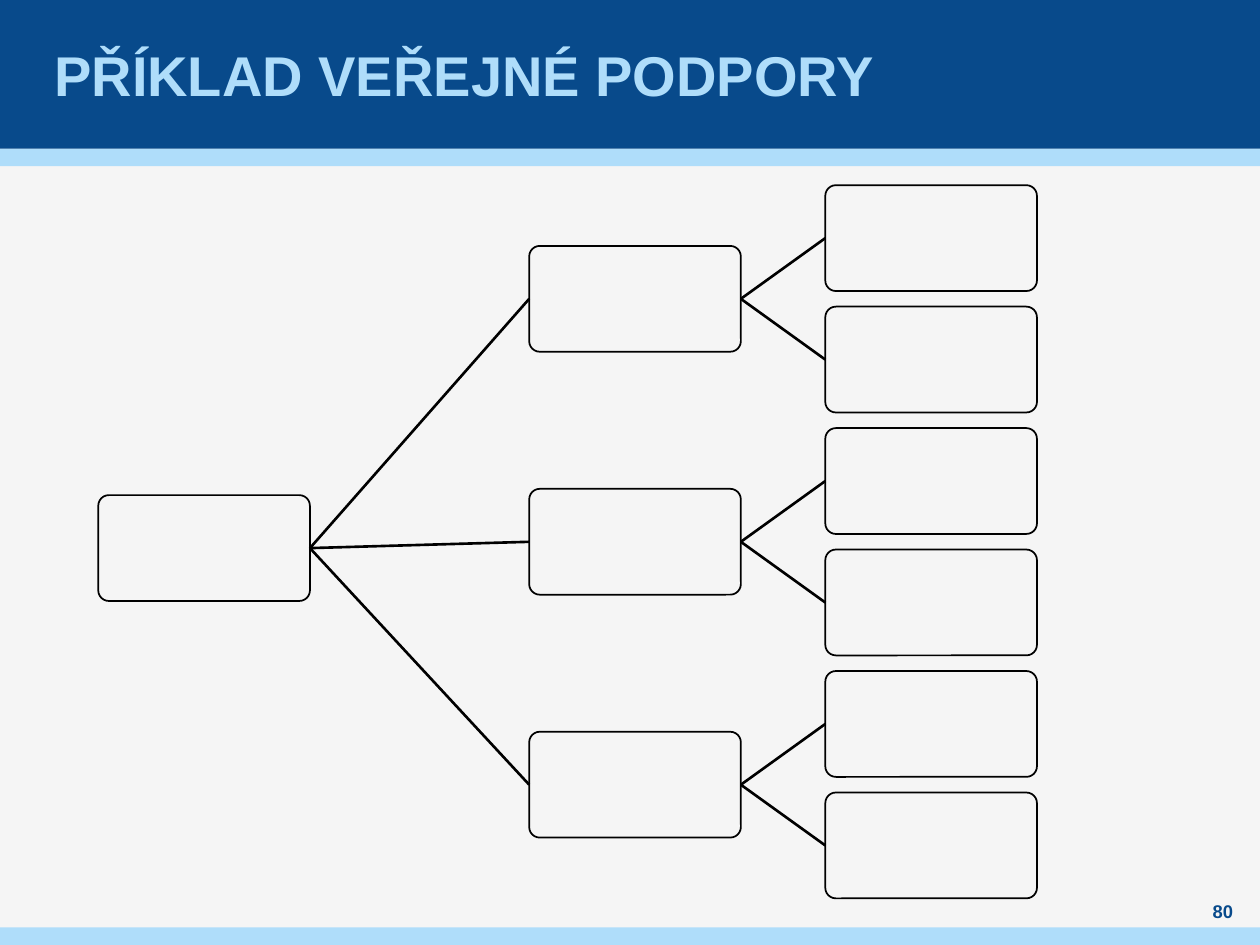
from pptx import Presentation
from pptx.enum.shapes import MSO_CONNECTOR as CONN, MSO_SHAPE as SHAPE
from pptx.enum.text import MSO_ANCHOR as ANCHOR, PP_ALIGN as ALIGN
from pptx.dml.color import RGBColor as RGB
from pptx.oxml.ns import qn
from pptx.util import Inches, Pt
from lxml import etree

COLORS = {"paper": "F5F5F5", "navy": "084A8B", "sky": "AFDDFA", "ink": "000000"}
FONT = "Arial"
BOX_W, BOX_H = 1.68, 0.84
ROOT_X, BRANCH_X, LEAF_X = 0.78, 4.2, 6.55
ROOT_Y = 3.93
FIRST_LEAF, LAST_LEAF = 1.47, 6.29
BRANCHES, LEAVES_EACH = 3, 2
LEFT_SITE, RIGHT_SITE = 1, 3


def color(name):
    return RGB.from_string(COLORS[name])


def write(tf, text, size=12, fill="ink", bold=False, align=ALIGN.LEFT):
    p = tf.paragraphs[0]
    p.alignment = align
    r = p.add_run()
    r.text = text
    r.font.name = FONT
    r.font.size = Pt(size)
    r.font.bold = bold
    r.font.color.rgb = color(fill)


class Deck:
    def __init__(self, prs):
        self.s = prs.slides.add_slide(prs.slide_layouts[6])
        bg = self.s.background.fill
        bg.solid()
        bg.fore_color.rgb = color("paper")

    def shape(self, kind, x, y, w, h, fill):
        sp = self.s.shapes.add_shape(kind, Inches(x), Inches(y), Inches(w), Inches(h))
        sp.shadow.inherit = False
        sp.fill.solid()
        sp.fill.fore_color.rgb = color(fill)
        return sp

    def band(self, y, h, fill):
        self.shape(SHAPE.RECTANGLE, 0, y, 10, h, fill).line.fill.background()

    def node(self, x, y):
        sp = self.shape(SHAPE.ROUNDED_RECTANGLE, x, y, BOX_W, BOX_H, "paper")
        sp.adjustments[0] = 0.1
        sp.line.color.rgb = color("ink")
        sp.line.width = Pt(1)
        return sp

    def link(self, parent, child):
        c = self.s.shapes.add_connector(CONN.STRAIGHT, 0, 0, 0, 0)
        c.begin_connect(parent, RIGHT_SITE)
        c.end_connect(child, LEFT_SITE)
        c.line.color.rgb = color("ink")
        c.line.width = Pt(1.5)
        etree.SubElement(c._element.spPr, qn("a:effectLst"))

    def text(self, text, x, y, w, h, inset=0, **style):
        sp = self.s.shapes.add_textbox(Inches(x), Inches(y), Inches(w), Inches(h))
        tf = sp.text_frame
        tf.word_wrap = True
        tf.vertical_anchor = ANCHOR.MIDDLE
        tf.margin_left = tf.margin_right = Inches(inset)
        tf.margin_top = tf.margin_bottom = 0
        write(tf, text, **style)


def main():
    prs = Presentation()
    prs.slide_width, prs.slide_height = Inches(10), Inches(7.5)
    deck = Deck(prs)

    deck.band(1.18, 0.14, "sky")
    deck.band(0, 1.18, "navy")
    deck.band(7.36, 0.14, "sky")
    deck.text("PŘÍKLAD VEŘEJNÉ PODPORY", 0.39, 0, 9.21, 1.18, inset=0.04,
              size=32, fill="sky", bold=True)
    deck.text("80", 9.45, 7.13, 0.51, 0.2,
              size=10.5, fill="navy", bold=True, align=ALIGN.CENTER)

    step = (LAST_LEAF - FIRST_LEAF) / (BRANCHES * LEAVES_EACH - 1)
    root = deck.node(ROOT_X, ROOT_Y)
    for b in range(BRANCHES):
        leaf_ys = [FIRST_LEAF + step * (b * LEAVES_EACH + i) for i in range(LEAVES_EACH)]
        branch = deck.node(BRANCH_X, sum(leaf_ys) / LEAVES_EACH)
        deck.link(root, branch)
        for y in leaf_ys:
            deck.link(branch, deck.node(LEAF_X, y))

    prs.save("out.pptx")


if __name__ == "__main__":
    main()
